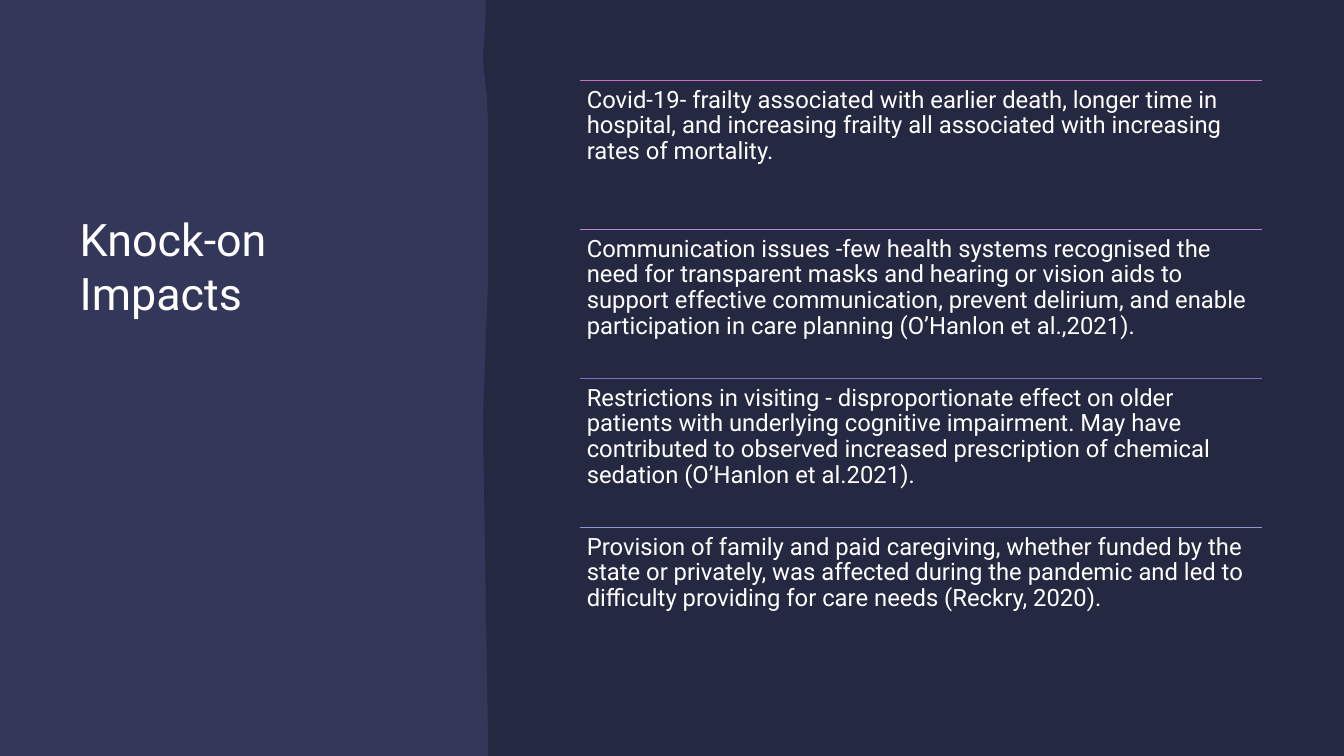
from pptx import Presentation
from pptx.dml.color import RGBColor
from pptx.enum.shapes import MSO_CONNECTOR as Conn, MSO_SHAPE as Shape
from pptx.enum.text import MSO_ANCHOR as Anchor, PP_ALIGN as Align
from pptx.oxml.ns import qn
from pptx.util import Inches, Pt
from lxml import etree

WIDE, HIGH = 13.33, 7.5
DARK, PANEL, WHITE = "242841", "33385B", "FFFFFF"

# Uneven left edge of the dark area, from bottom to top
EDGE = [(0.05, 7.5), (0.05, 7.29), (0, 4.17), (0.05, 2.81),
        (0.05, 1.18), (0.04, 0.96), (0, 0.6), (0.03, 0.11)]

IMPACTS = [
    ("CB6EC8", "Covid-19- frailty associated with earlier death, longer time "
     "in hospital, and increasing frailty all associated with increasing "
     "rates of mortality."),
    ("B788D4", "Communication issues -few health systems recognised the need "
     "for transparent masks and hearing or vision aids to support effective "
     "communication, prevent delirium, and enable participation in care "
     "planning (O’Hanlon et al.,2021)."),
    ("806ECB", "Restrictions in visiting - disproportionate effect on older "
     "patients with underlying cognitive impairment. May have contributed to "
     "observed increased prescription of chemical sedation (O’Hanlon et "
     "al.2021)."),
    ("8899D4", "Provision of family and paid caregiving, whether funded by "
     "the state or privately, was affected during the pandemic and led to "
     "difficulty providing for care needs (Reckry, 2020)."),
]


def color(code):
    return RGBColor.from_string(code)


def paint(shape, code):
    shape.shadow.inherit = False
    shape.fill.solid()
    shape.fill.fore_color.rgb = color(code)
    shape.line.fill.background()


def write(shape, text, size=17, code=WHITE, inset=0.0, space=1.0):
    frame = shape.text_frame
    frame.word_wrap = True
    frame.vertical_anchor = Anchor.TOP
    frame.margin_left = frame.margin_right = Inches(inset)
    frame.margin_top = frame.margin_bottom = Inches(inset)
    frame.text = text
    para = frame.paragraphs[0]
    para.alignment = Align.LEFT
    para.line_spacing = space
    para.space_before = Pt(0)
    para.font.name = "Roboto"
    para.font.size = Pt(size)
    para.font.bold = False
    para.font.color.rgb = color(code)


def add_back(slide, left, top, width, height, split):
    # Lighter panel
    panel = slide.shapes.add_shape(Shape.RECTANGLE, Inches(left), Inches(top),
                                   Inches(width), Inches(height))
    paint(panel, PANEL)
    # Dark area with the uneven edge
    right = Inches(left + width)
    edge = [(Inches(left + split + x), Inches(top + y)) for x, y in EDGE]
    start = (Inches(left + split + 0.03), Inches(top))
    form = slide.shapes.build_freeform(*start)
    form.add_line_segments([(right, Inches(top)),
                            (right, Inches(top + height)), *edge])
    paint(form.convert_to_shape(), DARK)


def add_title(slide, left, top, width, height):
    title = slide.shapes.title
    title.left, title.top = Inches(left), Inches(top)
    title.width, title.height = Inches(width), Inches(height)
    write(title, "Knock-on Impacts", size=32)
    # Bring the title in front of the background
    slide.shapes._spTree.append(title._element)


def add_rule(slide, left, top, width, code):
    rule = slide.shapes.add_connector(Conn.STRAIGHT, Inches(left), Inches(top),
                                      Inches(left + width), Inches(top))
    rule.line.color.rgb = color(code)
    rule.line.width = Pt(0.5)
    etree.SubElement(rule._element.spPr, qn("a:effectLst"))


def add_list(slide, left, top, width, height):
    step = height / len(IMPACTS)
    for row, (code, text) in enumerate(IMPACTS):
        y = top + row * step
        add_rule(slide, left, y, width, code)
        box = slide.shapes.add_textbox(Inches(left), Inches(y),
                                       Inches(width), Inches(step))
        write(box, text, inset=0.07, space=0.9)


def main():
    deck = Presentation()
    deck.slide_width, deck.slide_height = Inches(WIDE), Inches(HIGH)
    slide = deck.slides.add_slide(deck.slide_layouts[5])
    slide.background.fill.solid()
    slide.background.fill.fore_color.rgb = color(DARK)
    add_back(slide, 0, 0, WIDE, HIGH, split=4.79)
    add_title(slide, 0.79, 2.1, 3.4, 4.6)
    add_list(slide, 5.75, 0.8, 6.77, 5.91)
    deck.save("out.pptx")


if __name__ == "__main__":
    main()
